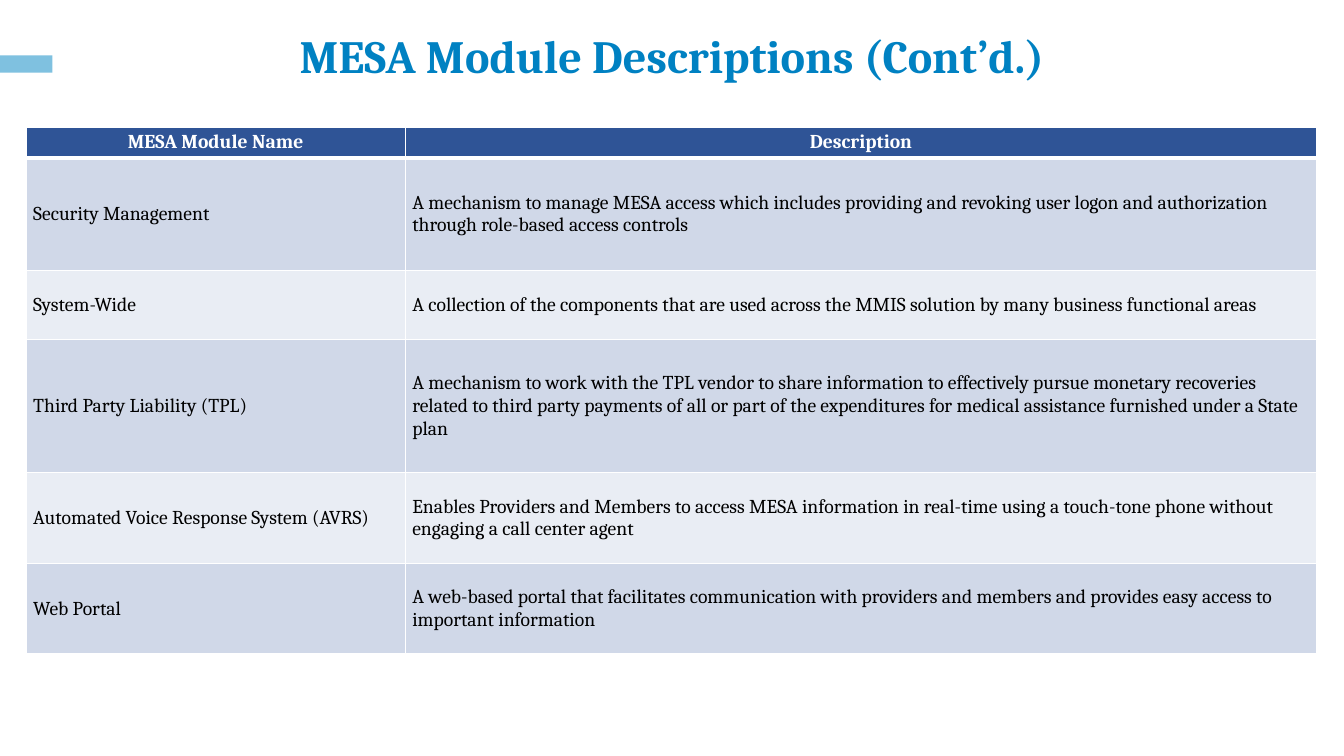
from lxml import etree
from pptx import Presentation
from pptx.dml.color import RGBColor
from pptx.enum.shapes import MSO_SHAPE
from pptx.enum.text import MSO_ANCHOR, PP_ALIGN
from pptx.oxml.ns import qn
from pptx.util import Inches, Pt

RECTANGLE = MSO_SHAPE.RECTANGLE
TOP, MIDDLE = MSO_ANCHOR.TOP, MSO_ANCHOR.MIDDLE
LEFT, CENTER = PP_ALIGN.LEFT, PP_ALIGN.CENTER

TITLE_ONLY = 5
FONT = "Cambria"
WHITE, BLACK = "FFFFFF", "000000"
TITLE_BLUE, ACCENT_BLUE, HEADER_BLUE = "0081C2", "7FC1E0", "2F5496"
BAND_FILLS = ("D0D8E8", "E9EDF4")

COLUMN_WIDTHS = (3.76, 9.04)
ROW_HEIGHTS = (0.31, 1.11, 0.69, 1.32, 0.9, 0.9)
MODULES = [
    ("MESA Module Name", "Description"),
    ("Security Management",
     "A mechanism to manage MESA access which includes providing and revoking "
     "user logon and authorization through role-based access controls"),
    ("System-Wide",
     "A collection of the components that are used across the MMIS solution by "
     "many business functional areas"),
    ("Third Party Liability (TPL)",
     "A mechanism to work with the TPL vendor to share information to "
     "effectively pursue monetary recoveries related to third party payments of "
     "all or part of the expenditures for medical assistance furnished under a "
     "State plan"),
    ("Automated Voice Response System (AVRS)",
     "Enables Providers and Members to access MESA information in real-time "
     "using a touch-tone phone without engaging a call center agent"),
    ("Web Portal",
     "A web-based portal that facilitates communication with providers and "
     "members and provides easy access to important information"),
]


def color(value):
    return RGBColor.from_string(value)


def write(frame, text, size=14, fill=BLACK, bold=False, align=LEFT, anchor=MIDDLE):
    """Fill a text frame with one formatted paragraph."""
    frame.word_wrap = True
    frame.vertical_anchor = anchor
    para = frame.paragraphs[0]
    para.alignment = align
    span = para.add_run()
    span.text = text
    span.font.name = FONT
    span.font.size = Pt(size)
    span.font.bold = bold
    span.font.color.rgb = color(fill)


def add_borders(cell, top, bottom):
    """Draw white borders; top and bottom widths are in points."""
    properties = cell._tc.get_or_add_tcPr()
    widths = {"a:lnL": 1, "a:lnR": 1, "a:lnT": top, "a:lnB": bottom}
    for tag, width in widths.items():
        line = etree.SubElement(properties, qn(tag), w=str(Pt(width)))
        solid = etree.SubElement(line, qn("a:solidFill"))
        etree.SubElement(solid, qn("a:srgbClr"), val=WHITE)


def add_title(page, text):
    title = page.shapes.title
    title.left, title.top = Inches(1.36), Inches(0.21)
    title.width, title.height = Inches(10.61), Inches(0.68)
    write(title.text_frame, text, size=33, fill=TITLE_BLUE, bold=True, align=CENTER)


def add_accent_bar(page):
    bar = page.shapes.add_shape(
        RECTANGLE, Inches(0), Inches(0.55), Inches(0.52), Inches(0.17))
    bar.shadow.inherit = False
    bar.fill.solid()
    bar.fill.fore_color.rgb = color(ACCENT_BLUE)
    bar.line.fill.background()


def format_cell(cell, text, row):
    cell.margin_left = cell.margin_right = Inches(0.07)
    cell.margin_top = cell.margin_bottom = Inches(0.04)
    add_borders(cell, top=3 if row == 1 else 1, bottom=3 if row == 0 else 1)
    cell.fill.solid()
    if row == 0:
        cell.fill.fore_color.rgb = color(HEADER_BLUE)
        cell.vertical_anchor = TOP
        write_cell = {"fill": WHITE, "bold": True, "align": CENTER}
    else:
        cell.fill.fore_color.rgb = color(BAND_FILLS[(row - 1) % 2])
        cell.vertical_anchor = MIDDLE
        write_cell = {}
    write(cell.text_frame, text, anchor=None, **write_cell)


def add_module_table(page):
    table = page.shapes.add_table(
        len(MODULES), len(COLUMN_WIDTHS), Inches(0.26), Inches(1.26),
        Inches(sum(COLUMN_WIDTHS)), Inches(sum(ROW_HEIGHTS))).table
    for column, width in zip(table.columns, COLUMN_WIDTHS):
        column.width = Inches(width)
    for row, (height, texts) in enumerate(zip(ROW_HEIGHTS, MODULES)):
        table.rows[row].height = Inches(height)
        for column, text in enumerate(texts):
            format_cell(table.cell(row, column), text, row)


def main():
    deck = Presentation()
    deck.slide_width, deck.slide_height = Inches(13.33), Inches(7.5)
    page = deck.slides.add_slide(deck.slide_layouts[TITLE_ONLY])

    # Heading
    add_title(page, "MESA Module Descriptions (Cont’d.)")

    # Module table
    add_module_table(page)

    # Accent at the left edge
    add_accent_bar(page)

    deck.save("out.pptx")


if __name__ == "__main__":
    main()
